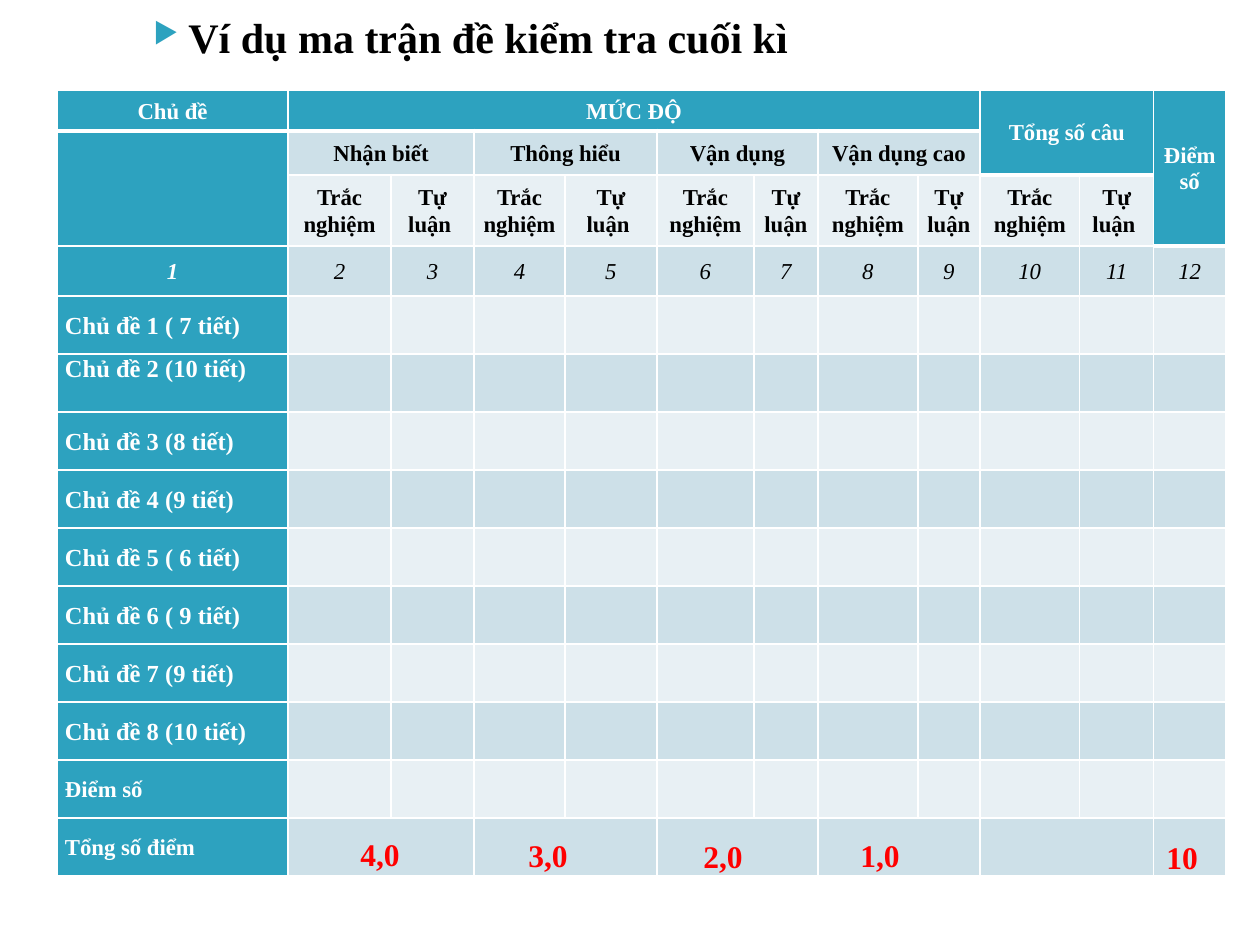
from lxml import etree
from pptx import Presentation
from pptx.dml.color import RGBColor
from pptx.enum.text import MSO_ANCHOR, PP_ALIGN
from pptx.oxml.ns import qn
from pptx.util import Pt

CENTER, LEFT = PP_ALIGN.CENTER, PP_ALIGN.LEFT
TOP, MIDDLE = MSO_ANCHOR.TOP, MSO_ANCHOR.MIDDLE
TEAL = RGBColor(0x2D, 0xA2, 0xBF)
BAND_DARK = RGBColor(0xCD, 0xE0, 0xE8)
BAND_LIGHT = RGBColor(0xE8, 0xF0, 0xF4)
WHITE = RGBColor(0xFF, 0xFF, 0xFF)
BLACK = RGBColor(0, 0, 0)
RED = RGBColor(0xFF, 0, 0)
FONT = "Times New Roman"
SCALE = 914400 / 126


def px(length):
    return round(length * SCALE)


def write(para, text, color, **formats):
    span = para.add_run()
    span.text = text
    span.font.color.rgb = color
    for name, value in {"name": FONT, "bold": True, **formats}.items():
        setattr(span.font, name, value)


deck = Presentation()
deck.slide_width, deck.slide_height = px(1260), px(945)
page = deck.slides.add_slide(deck.slide_layouts[6])

column_widths = [231, 103, 83, 91, 92, 97, 64, 100, 62, 100, 74, 72]
row_heights = [41, 44, 71, 50] + [58] * 10
topics = [
    "Chủ đề 1 ( 7 tiết)", "Chủ đề 2 (10 tiết)", "Chủ đề 3 (8 tiết)",
    "Chủ đề 4 (9 tiết)", "Chủ đề 5 ( 6 tiết)", "Chủ đề 6 ( 9 tiết)",
    "Chủ đề 7 (9 tiết)", "Chủ đề 8 (10 tiết)", "Điểm số", "Tổng số điểm",
]
levels = ["Nhận biết", "Thông hiểu", "Vận dụng", "Vận dụng cao"]

texts = {(0, 0): "Chủ đề", (0, 1): "MỨC ĐỘ", (0, 9): "Tổng số câu", (0, 11): "Điểm số"}
for index, level in enumerate(levels):
    texts[1, 1 + 2 * index] = level
for column in range(1, 11):
    texts[2, column] = "Trắc nghiệm" if column % 2 else "Tự luận "
for column in range(12):
    texts[3, column] = str(column + 1)
for index, topic in enumerate(topics):
    texts[4 + index, 0] = topic

table = page.shapes.add_table(
    len(row_heights), len(column_widths), px(57), px(90),
    px(sum(column_widths)), px(sum(row_heights)),
).table
table.first_row = table.horz_banding = False
for column, width in zip(table.columns, column_widths):
    column.width = px(width)
for row, height in zip(table.rows, row_heights):
    row.height = px(height)

merges = [(0, 1, 0, 8), (0, 9, 1, 10), (0, 11, 2, 11), (1, 0, 2, 0)]
merges += [(1, column, 1, column + 1) for column in range(1, 9, 2)]
merges += [(13, column, 13, column + 1) for column in range(1, 11, 2)]
for top, left, bottom, right in merges:
    table.cell(top, left).merge(table.cell(bottom, right))

header_extension = {(1, 9), (1, 10), (1, 11), (2, 11)}
for row in range(len(row_heights)):
    for column in range(len(column_widths)):
        cell = table.cell(row, column)
        in_header = row == 0 or (row, column) in header_extension
        is_teal = in_header or column == 0
        properties = cell._tc.get_or_add_tcPr()
        for side in ("lnL", "lnR", "lnT", "lnB"):
            weight = 3 if in_header and side == "lnB" else 1
            line = etree.SubElement(properties, qn("a:" + side), w=str(Pt(weight)))
            solid = etree.SubElement(line, qn("a:solidFill"))
            etree.SubElement(solid, qn("a:srgbClr"), val=str(WHITE))
        cell.fill.solid()
        cell.fill.fore_color.rgb = TEAL if is_teal else BAND_DARK if row % 2 else BAND_LIGHT
        inset = px(9 if row == 2 else 8)
        layout = {
            "margin_left": inset, "margin_right": inset,
            "margin_top": 0, "margin_bottom": 0,
            "vertical_anchor": TOP if row == 5 else MIDDLE,
        }
        for name, value in layout.items():
            setattr(cell, name, value)
        if (row, column) in texts:
            para = cell.text_frame.paragraphs[0]
            para.alignment = CENTER if row < 4 else LEFT
            para.line_spacing = 1.07
            write(
                para, texts[row, column], WHITE if is_teal else BLACK,
                size=Pt(14 if 4 <= row < 12 else 13),
                bold=row != 3 or column == 0, italic=row == 3,
            )

title = page.shapes.add_textbox(px(126), 0, px(1031), px(63))
title.text_frame.word_wrap = True
title.text_frame.margin_top = px(12)
para = title.text_frame.paragraphs[0]
properties = para._p.get_or_add_pPr()
properties.set("marL", str(px(50)))
properties.set("indent", str(px(-35)))
bullet_color = etree.SubElement(properties, qn("a:buClr"))
etree.SubElement(bullet_color, qn("a:srgbClr"), val=str(TEAL))
etree.SubElement(properties, qn("a:buSzPct"), val="68000")
etree.SubElement(properties, qn("a:buChar"), char="▶")
write(para, "Ví dụ ma trận đề kiểm tra cuối kì", BLACK, size=Pt(24))

scores = [("4,0", 348, 829), ("3,0", 516, 830), ("2,0", 691, 831), ("1,0", 848, 830), ("10", 1154, 832)]
for score, left, top in scores:
    box = page.shapes.add_textbox(px(left), px(top), px(113), px(50))
    box.text_frame.word_wrap = True
    write(box.text_frame.paragraphs[0], score, RED, size=Pt(18))

deck.save("out.pptx")
